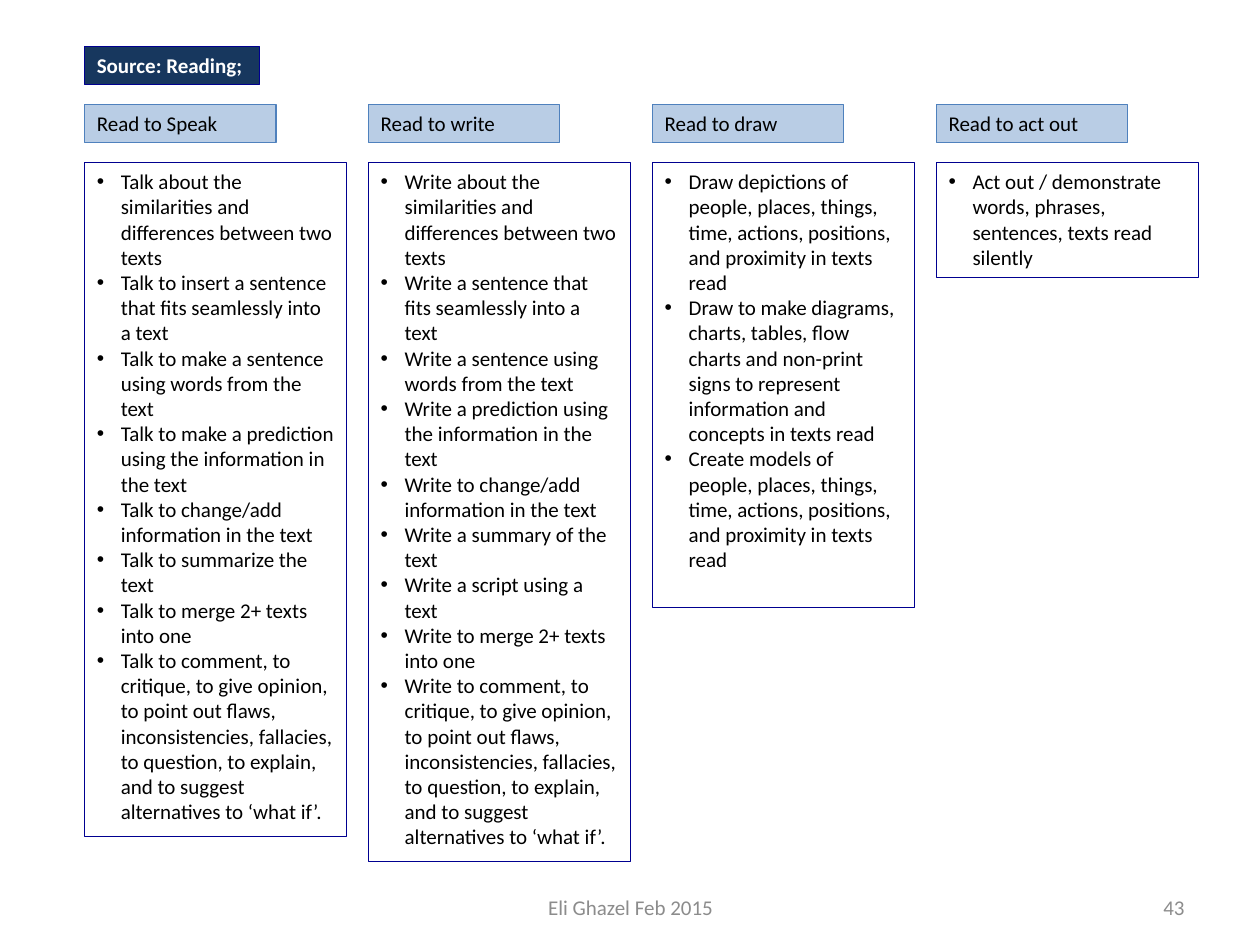
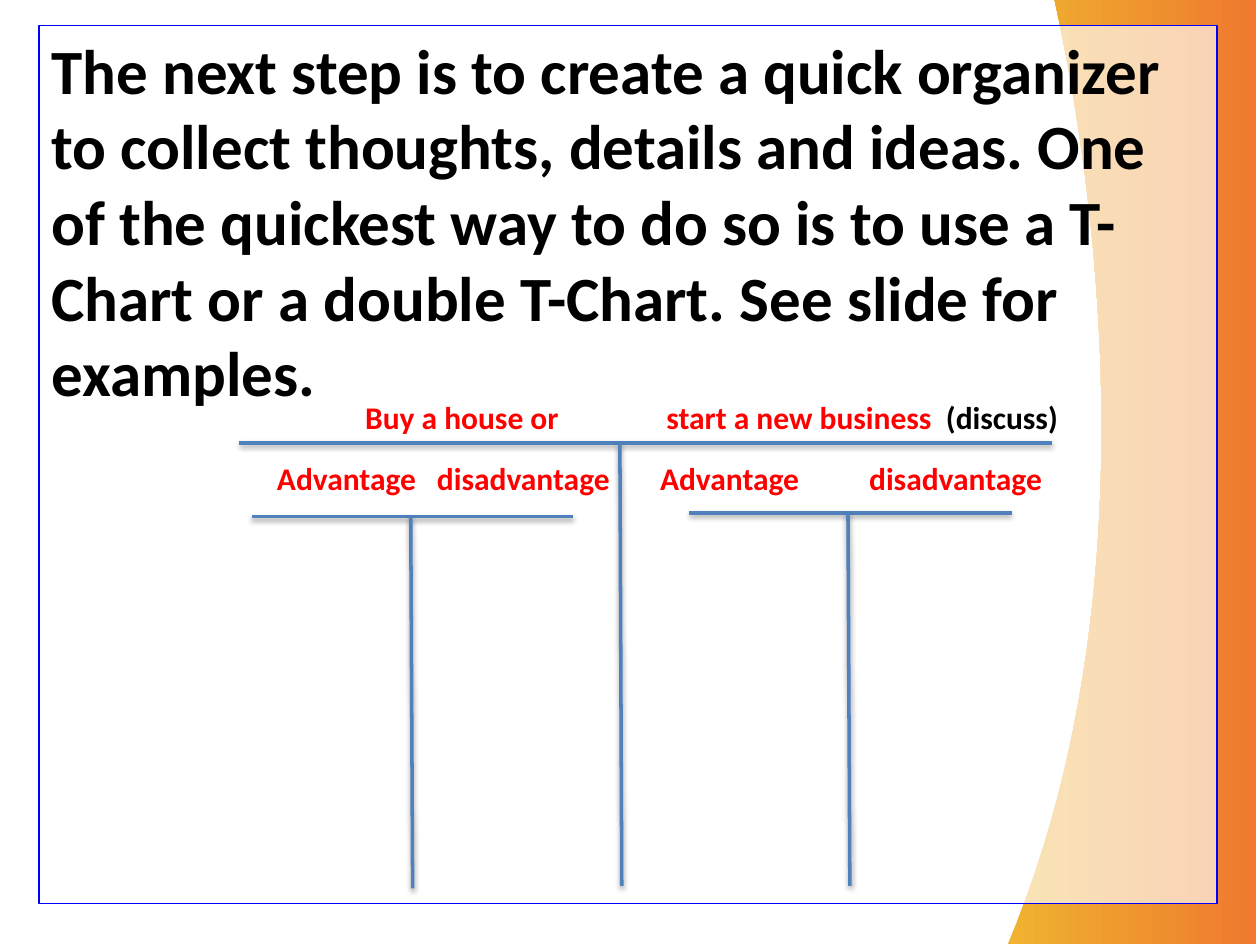
from dataclasses import dataclass

from lxml.etree import SubElement
from pptx import Presentation
from pptx.dml.color import RGBColor as RGB
from pptx.enum.shapes import MSO_CONNECTOR as CONNECTOR, MSO_SHAPE as SHAPE
from pptx.enum.text import MSO_ANCHOR as ANCHOR, PP_ALIGN as ALIGN
from pptx.oxml.ns import qn
from pptx.util import Emu, Inches, Pt


@dataclass(frozen=True)
class Theme:
    """Colours, type sizes and line widths shared by the slides."""
    font: str = "Calibri"
    black: str = "000000"
    white: str = "FFFFFF"
    grey: str = "8C8C8C"
    red: str = "FF0000"
    navy: str = "17375E"
    navy_line: str = "000090"
    pale_blue: str = "B9CDE5"
    blue: str = "4F81BD"
    frame: str = "0000FF"
    amber: str = "EFB32F"
    orange: str = "EF792F"
    body: int = 12
    label: int = 18
    heading: int = 36
    hairline: float = 0.75
    rule: float = 2


THEME = Theme()
COLS, ROWS = 100, 75
WIDTH, HEIGHT = Inches(10), Inches(7.5)
CELL_W, CELL_H = WIDTH / COLS, HEIGHT / ROWS
FIRST_COL, LAST_COL = 6.7, 74.3
TITLE_ROW, HEADER_ROW, LIST_ROW = 3.7, 8.3, 12.9

COMMENT = ("to comment, to critique, to give opinion, to point out flaws, inconsistencies, "
           "fallacies, to question, to explain, and to suggest alternatives to ‘what if’.")
SKILLS = [
    ("Read to Speak", 53.5, [
        "Talk about the similarities and differences between two texts",
        "Talk to insert a sentence that fits seamlessly into a text",
        "Talk to make a sentence using words from the text",
        "Talk to make a prediction using the information in the text",
        "Talk to change/add information in the text",
        "Talk to summarize the text",
        "Talk to merge 2+ texts into one",
        f"Talk {COMMENT}"]),
    ("Read to write", 55.5, [
        "Write about the similarities and differences between two texts",
        "Write a sentence that fits seamlessly into a text",
        "Write a sentence using words from the text",
        "Write a prediction using the information in the text",
        "Write to change/add information in the text",
        "Write a summary of the text",
        "Write a script using a text",
        "Write to merge 2+ texts into one",
        f"Write {COMMENT}"]),
    ("Read to draw", 35.3, [
        "Draw depictions of people, places, things, time, actions, positions, "
        "and proximity in texts read",
        "Draw to make diagrams, charts, tables, flow charts and non-print signs "
        "to represent information and concepts in texts read",
        "Create models of people, places, things, time, actions, positions, "
        "and proximity in texts read"]),
    ("Read to act out", 9.1, [
        "Act out / demonstrate words, phrases, sentences, texts read silently"]),
]
NEXT_STEP = ("The next step is to create a quick organizer to collect thoughts, details and "
             "ideas. One of the quickest way to do so is to use a T-Chart or a double T-Chart. "
             "See slide for examples.")


def x(cols):
    """Convert grid columns to a length."""
    return Emu(round(cols * CELL_W))


def y(rows):
    """Convert grid rows to a length."""
    return Emu(round(rows * CELL_H))


def area(left, top, width, height):
    """Convert a grid rectangle to lengths."""
    return x(left), y(top), x(width), y(height)


def style_run(r, size, color, bold=False):
    """Apply the theme font with a size, colour and weight."""
    r.font.name, r.font.size, r.font.bold = THEME.font, Pt(size), bold
    r.font.color.rgb = RGB.from_string(color)


def write(sp, text, size, color, bold=False, align=ALIGN.LEFT, anchor=ANCHOR.TOP):
    """Fill a shape with uniformly formatted text."""
    tf = sp.text_frame
    tf.word_wrap, tf.vertical_anchor = True, anchor
    tf.text = text
    for p in tf.paragraphs:
        p.alignment = align
        for r in p.runs:
            style_run(r, size, color, bold)
    return tf


def add_text(slide, place, text, size, color, **options):
    """Add a text box and return its text frame."""
    return write(slide.shapes.add_textbox(*area(*place)), text, size, color, **options)


def add_box(slide, place, line, fill=None):
    """Add an outlined rectangle with an optional fill."""
    sp = slide.shapes.add_shape(SHAPE.RECTANGLE, *area(*place))
    sp.shadow.inherit = False
    sp.line.color.rgb, sp.line.width = RGB.from_string(line), Pt(THEME.hairline)
    if fill:
        sp.fill.solid()
        sp.fill.fore_color.rgb = RGB.from_string(fill)
    else:
        sp.fill.background()
    return sp


def add_bullets(tf):
    """Give each paragraph a hanging bullet."""
    for p in tf.paragraphs:
        pPr = p._p.get_or_add_pPr()
        pPr.set("marL", str(Inches(0.19)))
        pPr.set("indent", str(-Inches(0.19)))
        SubElement(pPr, qn("a:buFont"), typeface="Arial")
        SubElement(pPr, qn("a:buChar"), char="•")


def set_tabs(p, stops):
    """Set left tab stops given in grid columns."""
    tabs = SubElement(p._p.get_or_add_pPr(), qn("a:tabLst"))
    for stop in stops:
        SubElement(tabs, qn("a:tab"), pos=str(x(stop)), algn="l")


def add_footer(slide, text, number):
    """Add the centred footer and the slide number."""
    for place, words, align in (((34.2, 70, 31.7, 4), text, ALIGN.CENTER),
                                ((71.7, 70, 23.3, 4), number, ALIGN.RIGHT)):
        add_text(slide, place, words, THEME.body, THEME.grey, align=align, anchor=ANCHOR.MIDDLE)


def add_skill(slide, left, header, height, items):
    """Add one column: a header label above a bulleted box."""
    label = add_box(slide, (left, HEADER_ROW, 15.2, 3), THEME.blue, THEME.pale_blue)
    write(label, header, THEME.body, THEME.black)
    box = add_box(slide, (left, LIST_ROW, 20.8, height), THEME.navy_line)
    add_bullets(write(box, "\n".join(items), THEME.body, THEME.black))


def add_rule(slide, x1, y1, x2, y2):
    """Add a blue rule with a soft shadow below it."""
    line = slide.shapes.add_connector(CONNECTOR.STRAIGHT, x(x1), y(y1), x(x2), y(y2))
    line.line.color.rgb, line.line.width = RGB.from_string(THEME.blue), Pt(THEME.rule)
    effects = SubElement(line._element.spPr, qn("a:effectLst"))
    shadow = SubElement(effects, qn("a:outerShdw"), blurRad=str(Pt(3.1)), dist=str(Pt(1.6)),
                        dir="5400000", rotWithShape="0")
    color = SubElement(shadow, qn("a:srgbClr"), val=THEME.black)
    SubElement(color, qn("a:alpha"), val="38000")


def add_t(slide, left, right, top, stem, foot):
    """Add a T made of a bar and a stem."""
    add_rule(slide, left, top, right, top)
    add_rule(slide, stem, top, stem + 0.15, foot)


def bezier(points, steps=48):
    """Return points along a cubic curve."""
    def at(t, a, b, c, d):
        """Return one coordinate of the curve at t."""
        s = 1 - t
        return a * s ** 3 + 3 * b * s * s * t + 3 * c * s * t * t + d * t ** 3
    return [tuple(at(i / steps, *axis) for axis in zip(*points)) for i in range(steps + 1)]


def add_side_band(slide):
    """Add the curved gradient band on the right edge."""
    right, foot = 99.7, 74.9
    curve = bezier([(83.7, 0), (85.7, 9.1), (92.7, 44.9), (80, foot)])
    builder = slide.shapes.build_freeform(x(right), 0)
    builder.add_line_segments([(x(a), y(b)) for a, b in curve + [(right, foot)]])
    sp = builder.convert_to_shape()
    sp.shadow.inherit = False
    sp.line.fill.background()
    sp.fill.gradient()
    sp.fill.gradient_angle = 0
    for stop, color in zip(sp.fill.gradient_stops, (THEME.amber, THEME.orange)):
        stop.color.rgb = RGB.from_string(color)


def build_reading_slide(slide):
    """Build the four reading skill columns."""
    title = add_box(slide, (FIRST_COL, TITLE_ROW, 13.9, 3), THEME.navy_line, THEME.navy)
    write(title, "Source: Reading;", THEME.body, THEME.white, bold=True)
    pitch = (LAST_COL - FIRST_COL) / (len(SKILLS) - 1)
    for i, skill in enumerate(SKILLS):
        add_skill(slide, FIRST_COL + i * pitch, *skill)
    add_footer(slide, "Eli Ghazel Feb 2015", "43")


def build_organizer_slide(slide):
    """Build the double T-chart under its introduction."""
    add_side_band(slide)
    panel = add_box(slide, (3.1, 2, 93.5, 69.7), THEME.frame, THEME.white)
    SubElement(panel._element.spPr.find(qn("a:solidFill"))[0], qn("a:alpha"), val="65000")
    write(panel, NEXT_STEP, THEME.heading, THEME.black, bold=True)
    for t in ((19, 83.5, 35.15, 49.2, 70.3), (20, 45.5, 41, 32.6, 70.5),
              (54.7, 80.3, 40.7, 67.3, 70.3)):
        add_t(slide, *t)
    choice = add_text(slide, (28, 31.1, 58.6, 4), "Buy a house or\tstart a new business\t",
                      THEME.label, THEME.red, bold=True).paragraphs[0]
    set_tabs(choice, (23.9, 46.1))
    r = choice.add_run()
    r.text = "(discuss)"
    style_run(r, THEME.label, THEME.black, bold=True)
    sides = add_text(slide, (21, 35.9, 65.7, 4),
                     "\t".join(["Advantage", "disadvantage"] * 2),
                     THEME.label, THEME.red, bold=True).paragraphs[0]
    set_tabs(sides, (12.7, 30.4, 47))


def main():
    """Build and save the presentation."""
    prs = Presentation()
    prs.slide_width, prs.slide_height = WIDTH, HEIGHT
    for build in (build_reading_slide, build_organizer_slide):
        build(prs.slides.add_slide(prs.slide_layouts[6]))
    prs.save("out.pptx")


if __name__ == "__main__":
    main()
